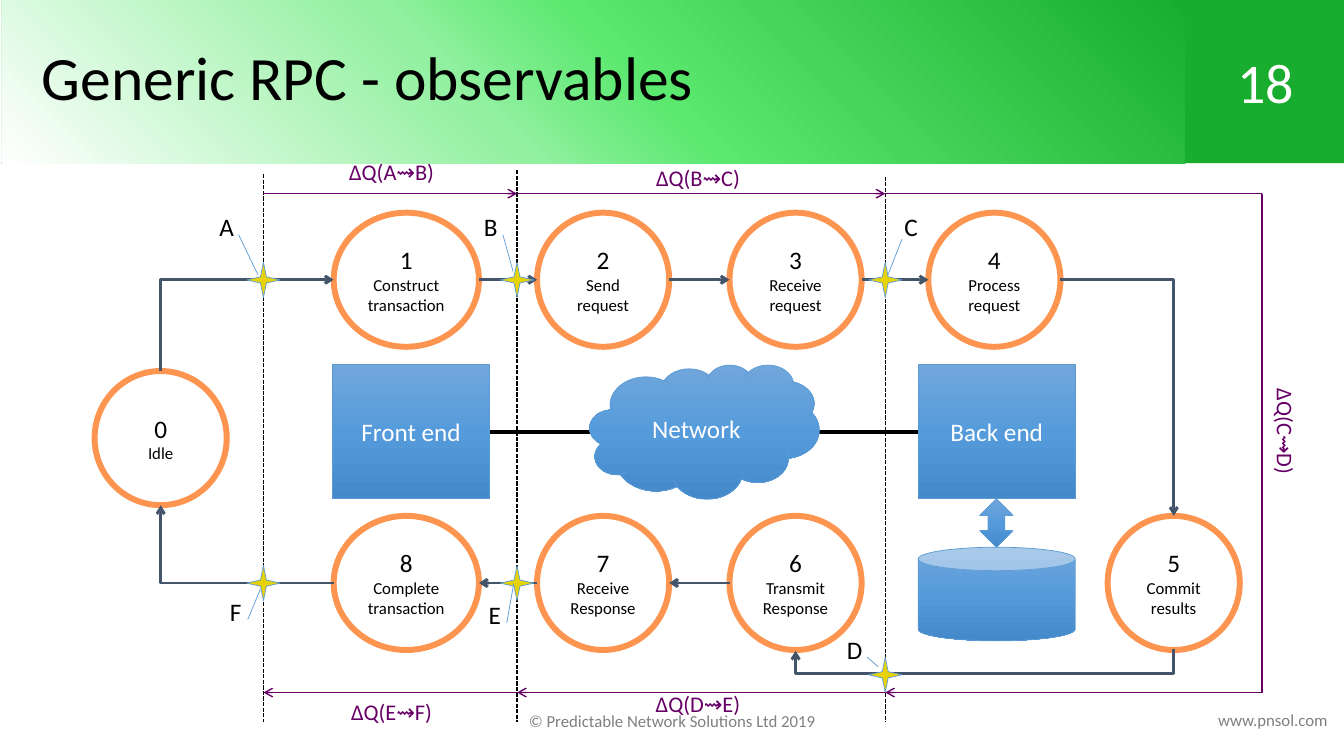
from lxml import etree
from pptx import Presentation, util as u
from pptx.dml.color import RGBColor
from pptx.enum import dml, shapes, text
from pptx.oxml import parse_xml
from pptx.oxml.ns import nsdecls, qn

Cm, Pt = u.Cm, u.Pt
KIND = shapes.MSO_SHAPE
MID = text.MSO_ANCHOR.MIDDLE
BLUE, SLATE, PLUM, GREEN = "5B9BD5", "44546A", "660066", "18AD2E"

# Shared levels in cm
TOP, LOW, MAIN = 7.05, 14.69, 11.04  # circle rows
LEFT, NEAR, FAR = 6.64, 13.03, 22.31  # dashed dividers
ROOF, BASE, EDGE = 4.88, 17.45, 31.8  # measured spans
DROP = 17.0  # level of the return line
SITES = {0: (0.5, 0), 2: (0, 0.5), 4: (0.5, 1), 6: (1, 0.5)}


def tint(code):
    return RGBColor.from_string(code)


def fade(shape, stops, way):
    """Fill a shape with a gradient of (percent, colour) stops."""
    shape.fill.solid()
    old = shape._element.spPr.find(qn("a:solidFill"))
    marks = "".join(f'<a:gs pos="{pos * 1000}"><a:srgbClr val="{code}"/></a:gs>'
                    for pos, code in stops)
    new = parse_xml(f'<a:gradFill {nsdecls("a")} rotWithShape="1">'
                    f'<a:gsLst>{marks}</a:gsLst>{way}</a:gradFill>')
    old.getparent().replace(old, new)


def write(shape, lines, code, inset=0.25):
    """Put centred (text, size) lines into a shape."""
    frame = shape.text_frame
    frame.word_wrap = True
    frame.vertical_anchor = MID
    frame.margin_left = frame.margin_right = Cm(inset)
    for i, (words, size) in enumerate(lines):
        par = frame.add_paragraph() if i else frame.paragraphs[0]
        par.text = words
        par.alignment = text.PP_ALIGN.CENTER
        par.font.name, par.font.size = "Calibri", Pt(size)
        par.font.color.rgb = tint(code)


def draw(slide, kind, x, y, w, h, fill=None, line=None, width=0.5):
    shape = slide.shapes.add_shape(kind, Cm(x), Cm(y), Cm(w), Cm(h))
    shape.shadow.inherit = False
    if fill:
        shape.fill.solid()
        shape.fill.fore_color.rgb = tint(fill)
    else:
        shape.fill.background()
    if line:
        shape.line.color.rgb = tint(line)
        shape.line.width = Pt(width)
    else:
        shape.line.fill.background()
    return shape


def block(slide, kind, x, y, w, h, name=""):
    shape = draw(slide, kind, x, y, w, h, line=BLUE)
    fade(shape, [(0, "71A6DB"), (50, "559BDB"), (100, "448ACA")],
         '<a:lin ang="5400000" scaled="0"/>')
    if name:
        write(shape, [(name, 18)], "FFFFFF")
    return shape


def label(slide, words, x, y, w, h, size, code, turn=0):
    box = slide.shapes.add_textbox(Cm(x), Cm(y), Cm(w), Cm(h))
    box.rotation = turn
    write(box, [(words, size)], code, 0)


def circle(slide, num, words, x, y, w=3.33, h=3.38):
    shape = draw(slide, KIND.OVAL, x - w / 2, y - h / 2, w, h, line="FD944F", width=4.25)
    write(shape, [(num, 18), (words, 12)], "000000")
    return shape


def style(wire, code, width, arrow):
    wire.line.color.rgb = tint(code)
    wire.line.width = Pt(width)
    if arrow:
        etree.SubElement(wire.line._get_or_add_ln(), qn("a:tailEnd"), type="arrow")
    etree.SubElement(wire._element.spPr, qn("a:effectLst"))


def rule(slide, x1, y1, x2, y2, code, width, arrow=False, dash=None):
    wire = slide.shapes.add_connector(shapes.MSO_CONNECTOR.STRAIGHT,
                                      Cm(x1), Cm(y1), Cm(x2), Cm(y2))
    if dash:
        wire.line.dash_style = dash
    style(wire, code, width, arrow)
    return wire


def spot(shape, site):
    fx, fy = SITES[site]
    return int(shape.left + fx * shape.width), int(shape.top + fy * shape.height)


def link(slide, a, i, b, j):
    """Straight arrow from site i of circle a to site j of circle b."""
    wire = slide.shapes.add_connector(shapes.MSO_CONNECTOR.STRAIGHT, *spot(a, i), *spot(b, j))
    glue(wire, a, i, b, j)


def glue(wire, a, i, b, j):
    wire._connect_begin_to(a, i)
    wire._connect_end_to(b, j)
    style(wire, SLATE, 2, True)


def bend(slide, a, i, b, j, turn, flip=False, depth=None):
    """Arrow with one corner, or with two corners at a given depth."""
    (x1, y1), (x2, y2) = spot(a, i), spot(b, j)
    w, h = abs(x2 - x1), max(abs(y2 - y1), Cm(0.04))
    if turn == 90:
        w, h = h, w
    x, y = (x1 + x2 - w) // 2, (y1 + y2 - h) // 2
    wire = slide.shapes.add_connector(shapes.MSO_CONNECTOR.ELBOW, x, y, x + w, y + h)
    props = wire._element.spPr
    frame, geom = props.find(qn("a:xfrm")), props.find(qn("a:prstGeom"))
    frame.set("rot", str(turn * 60000))
    if flip:
        frame.set("flipH", "1")
        frame.set("flipV", "1")
    if depth:
        guide = f"val {round(100000 * depth / w)}"
        etree.SubElement(geom.find(qn("a:avLst")), qn("a:gd"), name="adj1", fmla=guide)
    else:
        geom.set("prst", "bentConnector2")
    glue(wire, a, i, b, j)


def mark(slide, name, x, y, left, top, adj):
    """Star on the flow with its lettered callout."""
    draw(slide, KIND.STAR_4_POINT, x - 0.42, y - 0.44, 0.84, 0.89, "E7D209", BLUE)
    note = draw(slide, KIND.LINE_CALLOUT_1_NO_BORDER, left, top, 0.76, 0.71, line=BLUE)
    for i, val in enumerate(adj):
        note.adjustments[i] = val
    write(note, [(name, 18)], "000000", 0)


def head(slide):
    title = slide.shapes.title
    title.left, title.top, title.width, title.height = Cm(0.05), Cm(-0.03), Cm(29.82), Cm(4.14)
    fade(title, [(0, "FFFFFF"), (40, "91F09F"), (54, "5AE86F"), (100, GREEN)],
         '<a:path path="circle"><a:fillToRect t="100000" r="100000"/></a:path>')
    write(title, [("Generic RPC - observables", 44)], "000000")
    title.text_frame.auto_size = text.MSO_AUTO_SIZE.NONE
    title.text_frame.margin_left = Cm(1)
    par = title.text_frame.paragraphs[0]
    par.alignment, par.line_spacing = text.PP_ALIGN.LEFT, 0.9
    page = draw(slide, KIND.RECTANGLE, 29.87, -0.03, 4.04, 4.14, GREEN)
    write(page, [("18", 40)], "FFFFFF")


def main():
    deck = Presentation()
    deck.slide_width, deck.slide_height = Cm(33.87), Cm(19.05)
    slide = deck.slides.add_slide(deck.slide_layouts[5])

    # Title band and footer
    head(slide)
    label(slide, "© Predictable Network Solutions Ltd 2019", 12.8, 17.78, 8.28, 0.76, 12, "808080")
    label(slide, "www.pnsol.com", 30.3, 17.75, 3.56, 0.76, 12, "7F7F7F")

    # System parts
    front = block(slide, KIND.RECTANGLE, 8.38, 9.19, 3.96, 3.38, "Front end")
    back = block(slide, KIND.RECTANGLE, 23.14, 9.19, 3.96, 3.38, "Back end")
    wire = rule(slide, 12.34, 10.88, 23.14, 10.88, "000000", 3)
    wire.begin_connect(front, 3)
    wire.end_connect(back, 1)
    block(slide, KIND.CLOUD, 14.86, 9.19, 5.79, 3.38, "Network")
    block(slide, KIND.CAN, 23.14, 13.79, 3.96, 2.36)
    block(slide, KIND.UP_DOWN_ARROW, 24.69, 12.57, 0.84, 1.22)

    # Steps of the call
    steps = [("Idle", 4.05, MAIN), ("Construct transaction", 10.24, TOP, 3.66),
             ("Send request", 15.2, TOP), ("Receive request", 20.05, TOP),
             ("Process request", 25.06, TOP), ("Commit results", 29.58, LOW),
             ("Transmit Response", 20.05, LOW), ("Receive Response", 15.2, LOW),
             ("Complete transaction", 10.24, LOW, 3.66)]
    ring = [circle(slide, str(n), *step) for n, step in enumerate(steps)]

    # Flow between steps
    for n in (1, 2, 3):
        link(slide, ring[n], 6, ring[n + 1], 2)
    for n in (6, 7):
        link(slide, ring[n], 2, ring[n + 1], 6)
    bend(slide, ring[0], 0, ring[1], 2, 90, True)
    bend(slide, ring[4], 6, ring[5], 0, 0)
    bend(slide, ring[5], 4, ring[6], 4, 90, depth=Cm(0.62))
    bend(slide, ring[8], 2, ring[0], 4, 180)

    # Dividers
    for x, y in ((LEFT, 4.39), (NEAR, 4.29), (FAR, 4.45)):
        rule(slide, x, y, x, 18.19, "000000", 1, dash=dml.MSO_LINE.SQUARE_DOT)

    # Observation points
    for point in (("A", LEFT, TOP, 5.33, 5.36, (0.78, 0.9, 2.2, 1.54)),
                  ("B", NEAR, TOP, 11.99, 5.36, (0.78, 0.9, 2.09, 1.24)),
                  ("C", FAR, TOP, 22.58, 5.36, (0.94, 0.2, 2.24, -0.28)),
                  ("D", FAR, DROP, 21.16, 16, (0.78, 0.9, 1.13, 1.28)),
                  ("E", NEAR, LOW, 12.09, 15.14, (0.78, 0.9, -0.62, 1.13)),
                  ("F", LEFT, LOW, 5.56, 15.06, (0.78, 0.9, -0.3, 1.32))):
        mark(slide, *point)

    # Measured spans
    for x1, y1, x2, y2, arrow in ((LEFT, ROOF, NEAR, ROOF, True), (NEAR, ROOF, FAR, ROOF, True),
                                  (FAR, ROOF, EDGE, ROOF, False), (EDGE, ROOF, EDGE, BASE, False),
                                  (EDGE, BASE, FAR, BASE, True), (FAR, BASE, NEAR, BASE, True),
                                  (NEAR, BASE, LEFT, BASE, True)):
        rule(slide, x1, y1, x2, y2, PLUM, 1, arrow)
    for pair, x, y, turn in (("A⇝B", 8.41, 3.86, 0), ("B⇝C", 16.13, 4.01, 0),
                             ("C⇝D", 30.94, 10.41, 90), ("D⇝E", 16.13, 17.25, 0),
                             ("E⇝F", 8.41, 17.45, 0)):
        label(slide, f"∆Q({pair})", x, y, 2.92, 0.94, 16, PLUM, turn)

    deck.save("out.pptx")


if __name__ == "__main__":
    main()
